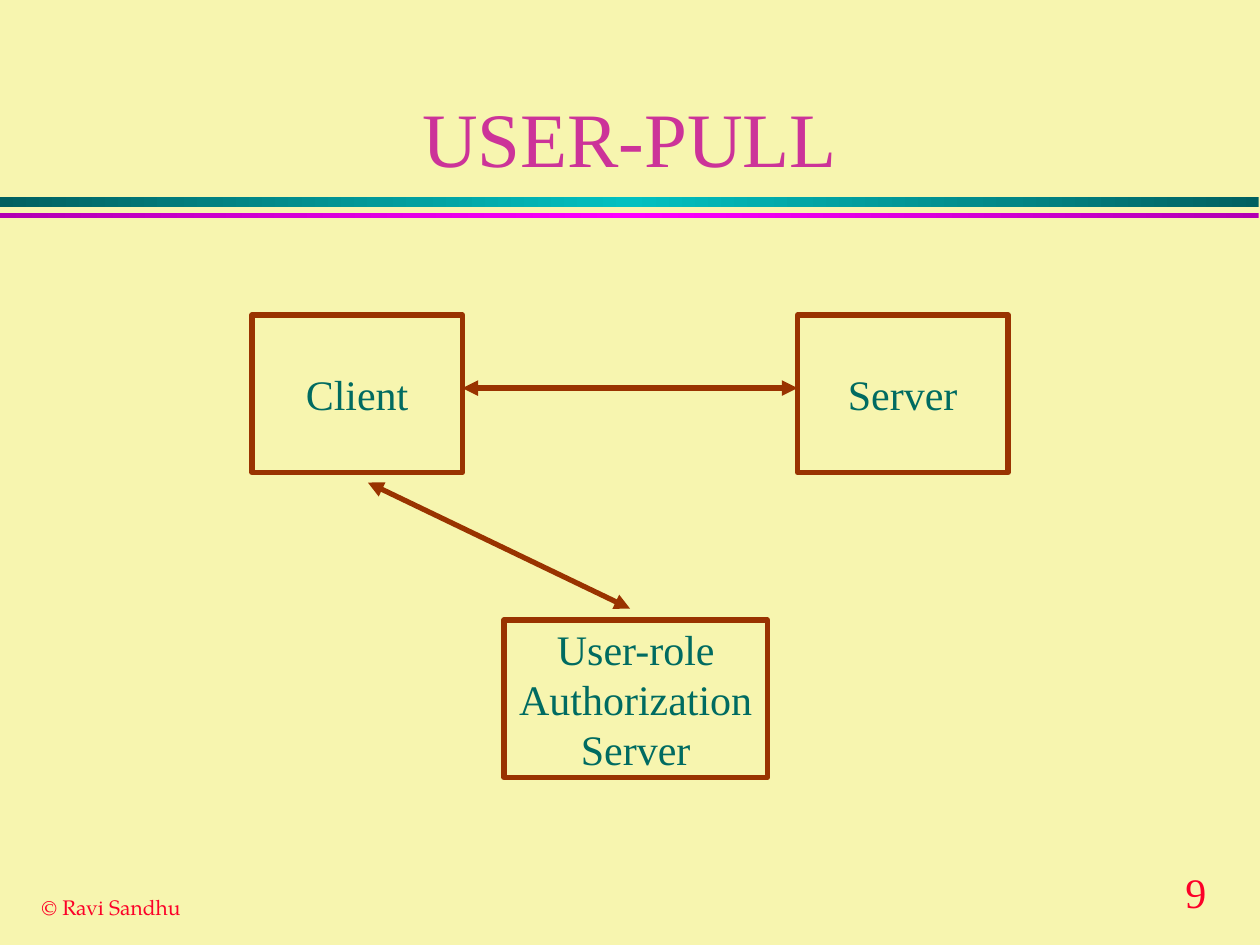
"""Build the USER-PULL architecture slide."""
from copy import deepcopy
from dataclasses import dataclass

from lxml import etree
from pptx import Presentation
from pptx.dml.color import RGBColor
from pptx.enum.shapes import MSO_CONNECTOR, MSO_SHAPE
from pptx.enum.text import MSO_ANCHOR, PP_ALIGN
from pptx.oxml.ns import qn
from pptx.util import Inches, Pt

RECT = MSO_SHAPE.RECTANGLE
LINE = MSO_CONNECTOR.STRAIGHT
MIDDLE, BOTTOM = MSO_ANCHOR.MIDDLE, MSO_ANCHOR.BOTTOM
LEFT, CENTER = PP_ALIGN.LEFT, PP_ALIGN.CENTER


@dataclass(frozen=True)
class Theme:
    back: str = "F7F5AF"
    title: str = "CC3399"
    label: str = "006B61"
    edge: str = "993300"
    foot: str = "FC0128"
    teal: tuple = ("006060", "00C0C0")
    pink: tuple = ("B200B2", "FF00FF")
    serif: str = "Times New Roman"
    book: str = "TeX Gyre Pagella"
    big: int = 44
    body: int = 24
    small: int = 12
    stroke: int = 3


theme = Theme()


def rgb(code):
    return RGBColor.from_string(code)


def write(frame, lines, size, color, font=theme.serif, align=CENTER):
    for i, line in enumerate(lines):
        para = frame.add_paragraph() if i else frame.paragraphs[0]
        para.alignment = align
        run = para.add_run()
        run.text = line
        run.font.size = Pt(size)
        run.font.name = font
        run.font.color.rgb = rgb(color)


prs = Presentation()
prs.slide_width, prs.slide_height = Inches(10), Inches(7.5)
slide = prs.slides.add_slide(prs.slide_layouts[5])
slide.background.fill.solid()
slide.background.fill.fore_color.rgb = rgb(theme.back)
shapes = slide.shapes

for top, high, (dark, light) in [(1.56, 0.08, theme.teal), (1.69, 0.04, theme.pink)]:
    bar = shapes.add_shape(RECT, 0, Inches(top), Inches(9.99), Inches(high))
    bar.shadow.inherit = False
    bar.line.fill.background()
    bar.fill.gradient()
    bar.fill.gradient_angle = 0
    stops = bar.fill.gradient_stops
    for stop, color, place in zip(stops, (dark, light), (0, 0.5)):
        stop.color.rgb = rgb(color)
        stop.position = place
    group = bar.element.spPr.find(qn("a:gradFill")).find(qn("a:gsLst"))
    last = deepcopy(group[0])
    last.set("pos", "100000")
    group.append(last)

for left, top, wide, high, text, size, font in [
    (9.31, 6.83, 0.59, 0.5, "9", theme.body, theme.serif),
    (0.23, 7.05, 1.31, 0.3, "© Ravi Sandhu", theme.small, theme.book),
]:
    note = shapes.add_textbox(Inches(left), Inches(top), Inches(wide), Inches(high))
    note.text_frame.word_wrap = False
    write(note.text_frame, [text], size, theme.foot, font, LEFT)

title = shapes.title
title.left, title.top = Inches(0.75), Inches(0.25)
title.width, title.height = Inches(8.5), Inches(1.25)
title.text_frame.vertical_anchor = BOTTOM
write(title.text_frame, ["USER-PULL"], theme.big, theme.title)

for left, top, wide, lines in [
    (2, 2.5, 1.67, ["Client"]),
    (6.33, 2.5, 1.67, ["Server"]),
    (4, 4.92, 2.09, ["User-role", "Authorization", "Server"]),
]:
    box = shapes.add_shape(RECT, Inches(left), Inches(top), Inches(wide), Inches(1.25))
    box.shadow.inherit = False
    box.fill.background()
    box.line.color.rgb = rgb(theme.edge)
    box.line.width = Pt(theme.stroke)
    box.text_frame.word_wrap = False
    box.text_frame.vertical_anchor = MIDDLE
    write(box.text_frame, lines, theme.body, theme.label)

for ends in [(3.67, 3.08, 6.33, 3.08), (5, 4.83, 2.92, 3.83)]:
    link = shapes.add_connector(LINE, *map(Inches, ends))
    link.line.color.rgb = rgb(theme.edge)
    link.line.width = Pt(theme.stroke)
    props = link.element.spPr
    for tag in ("a:headEnd", "a:tailEnd"):
        etree.SubElement(props.find(qn("a:ln")), qn(tag), type="triangle")
    etree.SubElement(props, qn("a:effectLst"))

prs.save("out.pptx")
